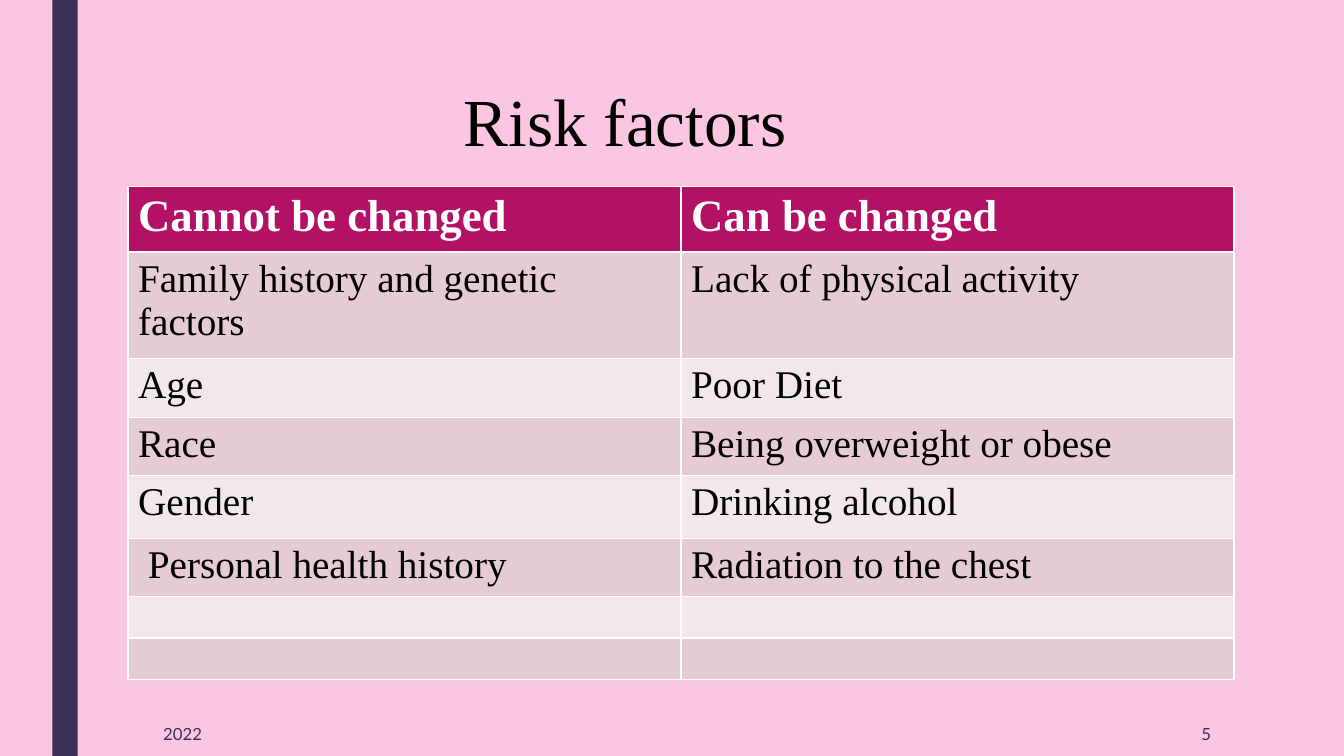
from dataclasses import dataclass

from pptx import Presentation
from pptx.dml.color import RGBColor
from pptx.enum.shapes import MSO_SHAPE
from pptx.enum.text import MSO_ANCHOR, PP_ALIGN
from pptx.util import Inches, Pt


@dataclass(frozen=True)
class Theme:
    back: str = "FAC6E1"
    bar: str = "3B3059"
    head: str = "B31166"
    bands: tuple = ("E5CCD3", "F2E7EA")
    dark: str = "000000"
    light: str = "FFFFFF"
    serif: str = "Times New Roman"
    sans: str = "Lato"
    title: int = 48
    label: int = 32
    body: int = 28
    small: int = 12


THEME = Theme()
WIDE, HIGH = 13.33, 7.5

FACTORS = [
    ("Cannot be changed", "Can be changed"),
    ("Family history and genetic factors", "Lack of physical activity"),
    ("Age", "Poor Diet"),
    ("Race", "Being overweight or obese"),
    ("Gender", "Drinking alcohol"),
    (" Personal health history", "Radiation to the chest"),
    ("", ""),
    ("", ""),
]
ROWS = [0.65, 1.06, 0.58, 0.58, 0.62, 0.58, 0.41, 0.41]


def paint(fill, color):
    fill.solid()
    fill.fore_color.rgb = RGBColor.from_string(color)


def style(par, face, size, color, bold=False):
    font = par.font
    font.name, font.size, font.bold = face, Pt(size), bold
    font.color.rgb = RGBColor.from_string(color)


def add_bar(slide, box):
    bar = slide.shapes.add_shape(MSO_SHAPE.RECTANGLE, *map(Inches, box))
    bar.shadow.inherit = False
    paint(bar.fill, THEME.bar)
    bar.line.fill.background()


def add_title(slide, box, text, indent):
    title = slide.shapes.title
    title.left, title.top, title.width, title.height = map(Inches, box)
    frame = title.text_frame
    frame.text = text
    frame.vertical_anchor = MSO_ANCHOR.TOP
    frame.margin_top = Inches(0.13)
    par = frame.paragraphs[0]
    par.alignment = PP_ALIGN.LEFT
    par.line_spacing = 0.89
    # Left indent moves the heading toward the middle
    props = par._p.get_or_add_pPr()
    props.set("marL", str(Inches(indent)))
    props.set("indent", "0")
    style(par, THEME.serif, THEME.title, THEME.dark)


def add_factors(slide, box):
    count = len(FACTORS[0])
    grid = slide.shapes.add_table(len(FACTORS), count, *map(Inches, box)).table
    for col in grid.columns:
        col.width = Inches(box[2] / count)
    for i, (texts, tall) in enumerate(zip(FACTORS, ROWS)):
        grid.rows[i].height = Inches(tall)
        top = i == 0
        for j, text in enumerate(texts):
            cell = grid.cell(i, j)
            paint(cell.fill, THEME.head if top else THEME.bands[(i - 1) % 2])
            if text:
                cell.text = text
                style(cell.text_frame.paragraphs[0], THEME.serif,
                      THEME.label if top else THEME.body,
                      THEME.light if top else THEME.dark, top)


def add_note(slide, box, text, align):
    frame = slide.shapes.add_textbox(*map(Inches, box)).text_frame
    frame.word_wrap = True
    frame.vertical_anchor = MSO_ANCHOR.MIDDLE
    frame.text = text
    par = frame.paragraphs[0]
    par.alignment = align
    style(par, THEME.sans, THEME.small, THEME.bar)


def main():
    deck = Presentation()
    deck.slide_width, deck.slide_height = Inches(WIDE), Inches(HIGH)
    slide = deck.slides.add_slide(deck.slide_layouts[5])
    paint(slide.background.fill, THEME.back)

    # Side bar and heading
    add_bar(slide, (0.52, 0, 0.25, HIGH))
    add_title(slide, (1.5, 0.75, 10.5, 1.62), "Risk factors", 3)

    # Table of factors
    add_factors(slide, (1.27, 1.85, 10.97, sum(ROWS)))

    # Footer: year and page number
    tall = 0.44
    add_note(slide, (1.52, HIGH - tall, 1.32, tall), "2022", PP_ALIGN.LEFT)
    add_note(slide, (10.36, HIGH - tall, 1.75, tall), "5", PP_ALIGN.RIGHT)

    deck.save("out.pptx")


if __name__ == "__main__":
    main()
